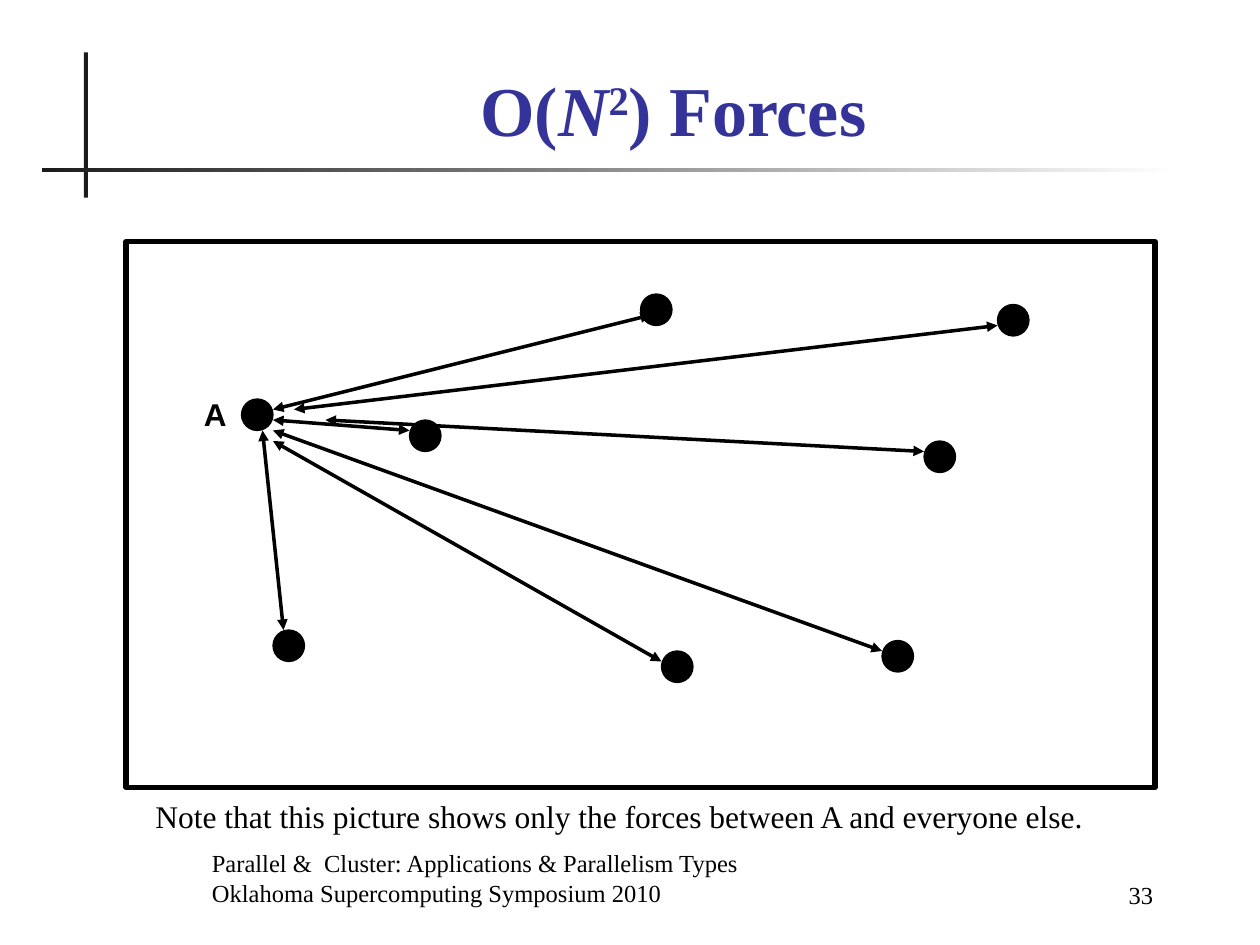
from lxml.etree import SubElement
from pptx import Presentation
from pptx.dml.color import RGBColor
from pptx.enum.shapes import MSO_CONNECTOR, MSO_SHAPE
from pptx.enum.text import MSO_ANCHOR, PP_ALIGN
from pptx.oxml.ns import qn
from pptx.util import Pt

COLORS = {"ink": "000000", "rule": "1C1C1C", "title": "333399", "paper": "FFFFFF"}
SERIF = "Times New Roman"
DISC_SIZE = 18
DISCS = [(138, 228), (234, 240), (570, 174), (528, 252),
         (504, 366), (378, 372), (366, 168), (156, 360)]
FORCES = [((156, 240), (234, 246)), ((150, 246), (162, 360)),
          ((156, 234), (372, 180)), ((156, 252), (378, 378)),
          ((156, 246), (504, 372)), ((168, 234), (570, 186)),
          ((186, 240), (528, 258))]


def color(name):
    return RGBColor.from_string(COLORS[name])


class SlideBuilder:
    def __init__(self, page):
        self.page = page

    def shape(self, kind, left, top, width, height, fill=None, line=None):
        shape = self.page.shapes.add_shape(kind, Pt(left), Pt(top), Pt(width), Pt(height))
        shape.shadow.inherit = False
        if fill:
            shape.fill.solid()
            shape.fill.fore_color.rgb = color(fill)
        else:
            shape.fill.background()
        if line:
            shape.line.color.rgb = color("ink")
            shape.line.width = Pt(line)
        else:
            shape.line.fill.background()
        return shape

    def fading_rule(self, left, top, width, height):
        rule = self.shape(MSO_SHAPE.RECTANGLE, left, top, width, height)
        rule.fill.gradient()
        rule.fill.gradient_angle = 0
        for stop, name, position in zip(rule.fill.gradient_stops, ("rule", "paper"), (0, 1)):
            stop.color.rgb = color(name)
            stop.position = position

    def disc(self, left, top):
        self.shape(MSO_SHAPE.OVAL, left, top, DISC_SIZE, DISC_SIZE, "ink", 0.75)

    def force(self, start, end):
        arrow = self.page.shapes.add_connector(
            MSO_CONNECTOR.STRAIGHT, *map(Pt, start), *map(Pt, end))
        arrow.line.color.rgb = color("ink")
        arrow.line.width = Pt(2)
        line = arrow.line._get_or_add_ln()
        for tag in ("a:headEnd", "a:tailEnd"):
            SubElement(line, qn(tag), type="triangle")
        SubElement(arrow._element.spPr, qn("a:effectLst"))

    def text(self, left, top, width, height, paragraphs, size, align=PP_ALIGN.LEFT,
             anchor=MSO_ANCHOR.TOP, font=SERIF, ink="ink", bold=False, wrap=True):
        box = self.page.shapes.add_textbox(Pt(left), Pt(top), Pt(width), Pt(height))
        frame = box.text_frame
        frame.word_wrap = wrap
        frame.vertical_anchor = anchor
        for index, runs in enumerate(paragraphs):
            para = frame.add_paragraph() if index else frame.paragraphs[0]
            para.alignment = align
            for words, style in runs:
                span = para.add_run()
                span.text = words
                span.font.name = font
                span.font.size = Pt(size)
                span.font.bold = bold
                span.font.italic = style == "italic"
                span.font.color.rgb = color(ink)
                if style == "superscript":
                    span.font._element.set("baseline", "30000")


def main():
    deck = Presentation()
    deck.slide_width, deck.slide_height = Pt(720), Pt(540)
    slide = SlideBuilder(deck.slides.add_slide(deck.slide_layouts[6]))

    slide.shape(MSO_SHAPE.RECTANGLE, 48, 30, 2.25, 83, "rule")
    slide.fading_rule(24, 96, 648, 2.25)
    slide.text(564, 487.5, 102, 36, [[("33", None)]], 14, PP_ALIGN.RIGHT, MSO_ANCHOR.BOTTOM)
    title = [("O(", None), ("N", "italic"), ("2", "superscript"), (") Forces", None)]
    slide.text(78, 36, 613.5, 53.5, [title], 40, PP_ALIGN.CENTER, MSO_ANCHOR.BOTTOM,
               ink="title", bold=True)

    slide.shape(MSO_SHAPE.RECTANGLE, 72, 138, 588, 312, line=3)
    for left, top in DISCS:
        slide.disc(left, top)
    for start, end in FORCES:
        slide.force(start, end)

    note = "Note that this picture shows only the forces between A and everyone else."
    slide.text(79, 452, 550, 29, [[(note, None)]], 18, PP_ALIGN.CENTER, wrap=False)
    slide.text(108, 222, 30, 29, [[("A", None)]], 18, PP_ALIGN.CENTER, font="Arial", bold=True)
    footer = ["Parallel &  Cluster: Applications & Parallelism Types",
              "Oklahoma Supercomputing Symposium 2010"]
    slide.text(114, 486, 438, 36, [[(words, None)] for words in footer], 14,
               anchor=MSO_ANCHOR.BOTTOM)
    deck.save("out.pptx")


if __name__ == "__main__":
    main()
